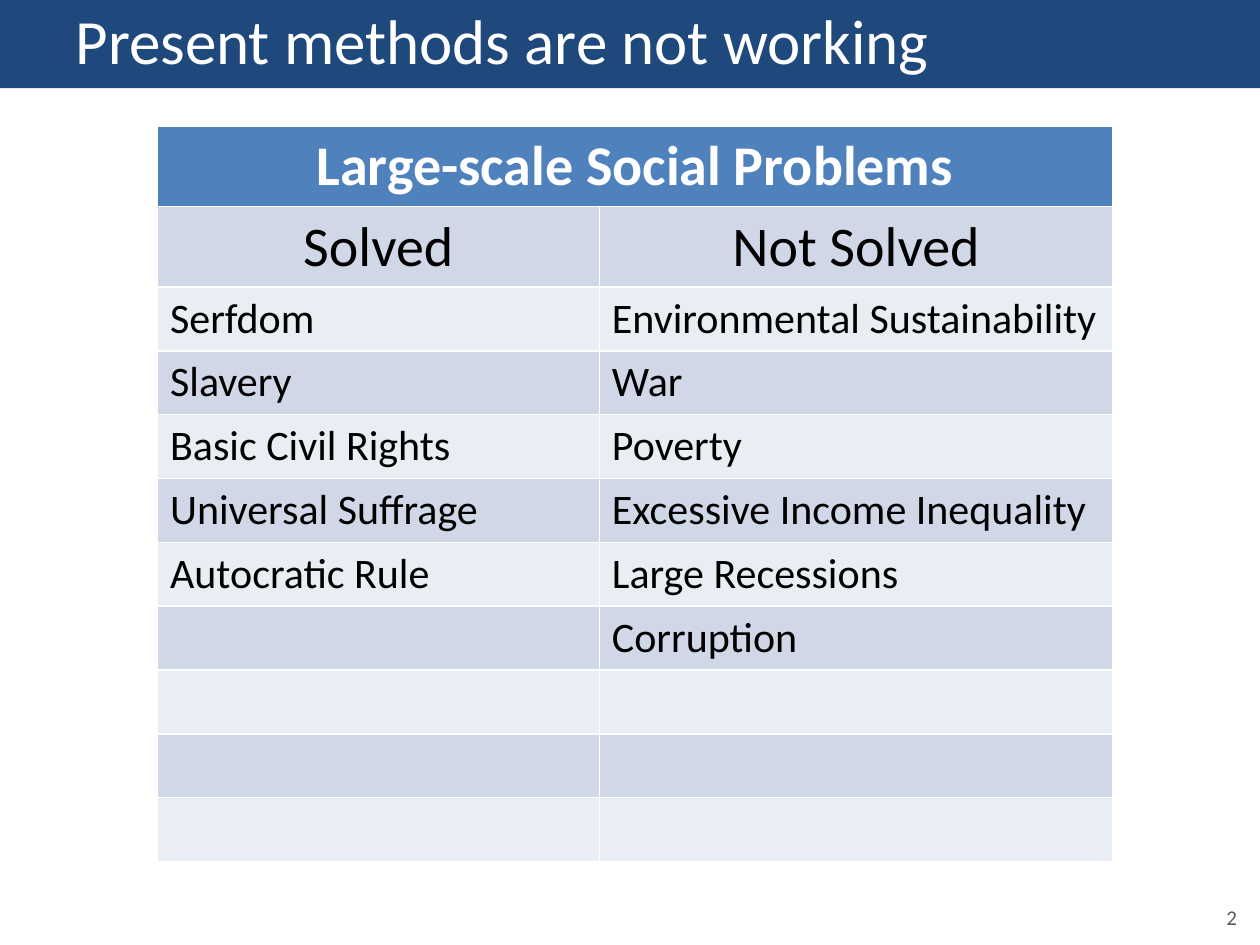
from pptx import Presentation
from pptx.dml.color import RGBColor
from pptx.enum.shapes import MSO_SHAPE
from pptx.enum.text import MSO_ANCHOR, PP_ALIGN
from pptx.util import Pt

TITLE = "Present methods are not working"
PAGE_NUMBER = "2"
TABLE_TITLE = "Large-scale Social Problems"
COLUMN_HEADS = ("Solved", "Not Solved")
PROBLEMS = [
    ("Serfdom", "Environmental Sustainability"),
    ("Slavery", "War"),
    ("Basic Civil Rights", "Poverty"),
    ("Universal Suffrage", "Excessive Income Inequality"),
    ("Autocratic Rule", "Large Recessions"),
    ("", "Corruption"),
    ("", ""),
    ("", ""),
    ("", ""),
]
COLUMN_WIDTHS = (252.5, 293.5)
HEAD_HEIGHT, ROW_HEIGHT = 46, 36.5
HEAD_ROWS = 2
BAND_FILLS = ("D0D8E8", "E9EDF4")


def paint(fill, color):
    fill.solid()
    fill.fore_color.rgb = RGBColor.from_string(color)


def write(frame, text, size, color, alignment=PP_ALIGN.LEFT, bold=False):
    paragraph = frame.paragraphs[0]
    paragraph.text = text
    paragraph.alignment = alignment
    paragraph.font.name = "Calibri"
    paragraph.font.size = Pt(size)
    paragraph.font.bold = bold
    paragraph.font.color.rgb = RGBColor.from_string(color)
    return paragraph


def add_title(slide, width):
    shape = slide.shapes.add_shape(MSO_SHAPE.RECTANGLE, 0, 0, width, Pt(50.4))
    shape.shadow.inherit = False
    paint(shape.fill, "1F497D")
    shape.line.fill.background()
    frame = shape.text_frame
    frame.vertical_anchor = MSO_ANCHOR.MIDDLE
    frame.margin_left = Pt(43.2)
    frame.margin_top = frame.margin_bottom = 0
    write(frame, TITLE, 36, "FFFFFF").line_spacing = 0.9


def add_problem_table(slide):
    rows = [(TABLE_TITLE, ""), COLUMN_HEADS, *PROBLEMS]
    heights = [HEAD_HEIGHT if index < HEAD_ROWS else ROW_HEIGHT for index in range(len(rows))]
    table = slide.shapes.add_table(
        len(rows), len(COLUMN_WIDTHS), Pt(90), Pt(72), Pt(sum(COLUMN_WIDTHS)), Pt(sum(heights))
    ).table
    for column, width in zip(table.columns, COLUMN_WIDTHS):
        column.width = Pt(width)
    table.cell(0, 0).merge(table.cell(0, 1))
    for row_index, (texts, height) in enumerate(zip(rows, heights)):
        table.rows[row_index].height = Pt(height)
        is_title = row_index == 0
        is_head = row_index < HEAD_ROWS
        for column_index, text in enumerate(texts):
            cell = table.cell(row_index, column_index)
            paint(cell.fill, "4F81BD" if is_title else BAND_FILLS[(row_index - 1) % 2])
            write(
                cell.text_frame,
                text,
                32 if is_head else 24,
                "FFFFFF" if is_title else "000000",
                PP_ALIGN.CENTER if is_head else PP_ALIGN.LEFT,
                is_title,
            )


def add_page_number(slide):
    box = slide.shapes.add_textbox(Pt(678), Pt(513.4), Pt(36), Pt(24))
    box.text_frame.word_wrap = True
    write(box.text_frame, PAGE_NUMBER, 12, "595959", PP_ALIGN.RIGHT)


def main():
    presentation = Presentation()
    presentation.slide_width = Pt(720)
    presentation.slide_height = Pt(540)
    slide = presentation.slides.add_slide(presentation.slide_layouts[6])
    add_page_number(slide)
    add_title(slide, presentation.slide_width)
    add_problem_table(slide)
    presentation.save("out.pptx")


if __name__ == "__main__":
    main()
